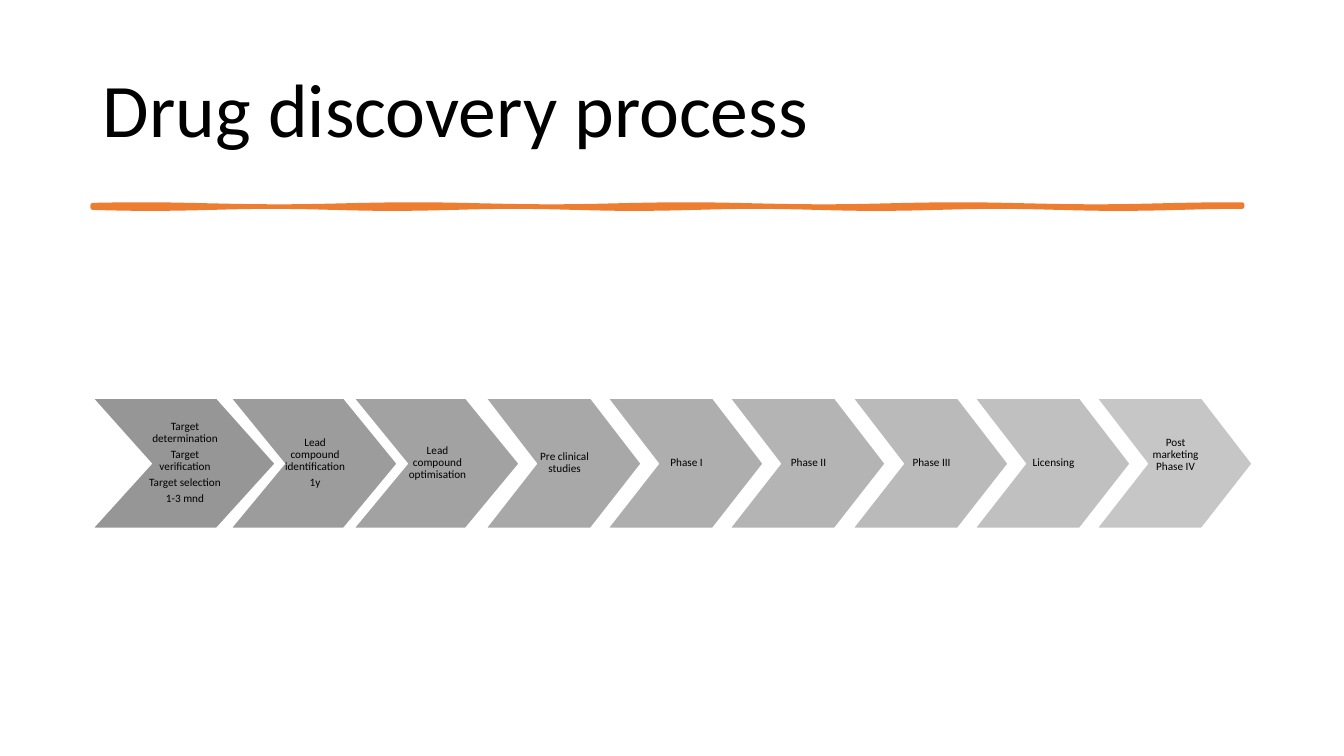
from math import cos, pi

from lxml.etree import SubElement
from pptx import Presentation
from pptx.dml.color import RGBColor
from pptx.enum.text import MSO_ANCHOR, MSO_AUTO_SIZE, PP_ALIGN
from pptx.oxml.ns import qn
from pptx.util import Pt

PX = 9144
STEPS = [
    ["Target determination", "Target verification", "Target selection", "1-3 mnd"],
    ["Lead compound identification", "1y"],
    ["Lead compound optimisation"],
    ["Pre clinical studies"],
    ["Phase I"],
    ["Phase II"],
    ["Phase III"],
    ["Licensing"],
    ["Post marketing Phase IV"],
]
COLORS = {"ink": "000000", "rule": "ED7D31", "gap": "FFFFFF"}
COLORS.update({f"step{i}": f"{0x96 + 6 * i:02X}" * 3 for i in range(len(STEPS))})

DISCOVERY_PLACES = [(92, 181, 58), (229, 165, 53), (351, 164, 53)]
TRIAL_LEFT, TRIAL_PITCH, TRIAL_WIDTH, TRIAL_NOTCH = 482, 121.25, 154, 50


def color(name):
    """Return the named colour."""
    return RGBColor.from_string(COLORS[name])


def write(para, text, size, font="Calibri", ink="ink", align=PP_ALIGN.LEFT, after=0):
    """Put formatted text into a paragraph."""
    para.alignment = align
    para.line_spacing = 0.9
    para.space_before = Pt(0)
    para.space_after = Pt(after)
    span = para.add_run()
    span.text = text
    span.font.name = font
    span.font.size = Pt(size)
    span.font.color.rgb = color(ink)


def wave(x, crest, period):
    """Return the height at x of a wave with a crest at the given place."""
    return cos(2 * pi * (x - crest) / period)


def step_places():
    """Return left, width and notch of each process step."""
    trial_count = len(STEPS) - len(DISCOVERY_PLACES)
    return DISCOVERY_PLACES + [
        (round(TRIAL_LEFT + TRIAL_PITCH * i), TRIAL_WIDTH, TRIAL_NOTCH)
        for i in range(trial_count)
    ]


class SlideBuilder:
    """Hold the page and the style of its elements."""

    def __init__(self, page):
        """Keep the page, text sizes and line weights."""
        self.page = page
        self.title_size = 54
        self.step_size = 8
        self.rule_weight = 3.25
        self.step_weight = 1

    def title(self, text, left, top, width, height):
        """Fill and place the title."""
        box = self.page.shapes.title
        box.left, box.top, box.width, box.height = (
            v * PX for v in (left, top, width, height))
        frame = box.text_frame
        frame.auto_size = MSO_AUTO_SIZE.NONE
        frame.vertical_anchor = MSO_ANCHOR.MIDDLE
        write(frame.paragraphs[0], text, self.title_size)

    def outline(self, points, fill, line, weight):
        """Draw a closed filled outline."""
        points = [(round(x * PX), round(y * PX)) for x, y in points]
        builder = self.page.shapes.build_freeform(*points[0])
        builder.add_line_segments(points[1:], close=True)
        shape = builder.convert_to_shape()
        shape.shadow.inherit = False
        shape.fill.solid()
        shape.fill.fore_color.rgb = color(fill)
        shape.line.color.rgb = color(line)
        shape.line.width = Pt(weight)
        return shape

    def rough_rule(self, left, right, top, bottom, stride=10):
        """Draw a rule whose two edges swell at different periods."""
        across = range(left, right + 1, stride)
        upper = [(x, top - wave(x, crest=140, period=270)) for x in across]
        lower = [(x, bottom + wave(x, crest=150, period=240)) for x in across]
        shape = self.outline(upper + lower[::-1], "rule", "rule", self.rule_weight)
        SubElement(shape.element.spPr.find(qn("a:ln")), qn("a:round"))

    def chevron(self, lines, left, width, notch, fill, bottom_inset=1):
        """Draw one labelled process step."""
        top, middle, bottom = 395, 460, 524
        right = left + width
        shape = self.outline(
            [(left, top), (right - notch, top), (right, middle),
             (right - notch, bottom), (left, bottom), (left + notch, middle)],
            fill, "gap", self.step_weight)
        frame = shape.text_frame
        frame.word_wrap = True
        frame.vertical_anchor = MSO_ANCHOR.MIDDLE
        frame.margin_left, frame.margin_right = 52 * PX, 50 * PX
        frame.margin_top, frame.margin_bottom = PX, bottom_inset * PX
        for i, text in enumerate(lines):
            para = frame.add_paragraph() if i else frame.paragraphs[0]
            write(para, text, self.step_size, align=PP_ALIGN.CENTER, after=2.8)


def main():
    """Build and save the deck."""
    deck = Presentation()
    deck.slide_width, deck.slide_height = 1333 * PX, 750 * PX
    builder = SlideBuilder(deck.slides.add_slide(deck.slide_layouts[5]))
    builder.title("Drug discovery process", 92, 40, 1150, 145)
    builder.rough_rule(left=92, right=1232, top=204, bottom=206)
    for i, (lines, place) in enumerate(zip(STEPS, step_places())):
        last = i == len(STEPS) - 1
        builder.chevron(lines, *place, f"step{i}", bottom_inset=18 if last else 1)
    deck.save("out.pptx")


if __name__ == "__main__":
    main()
